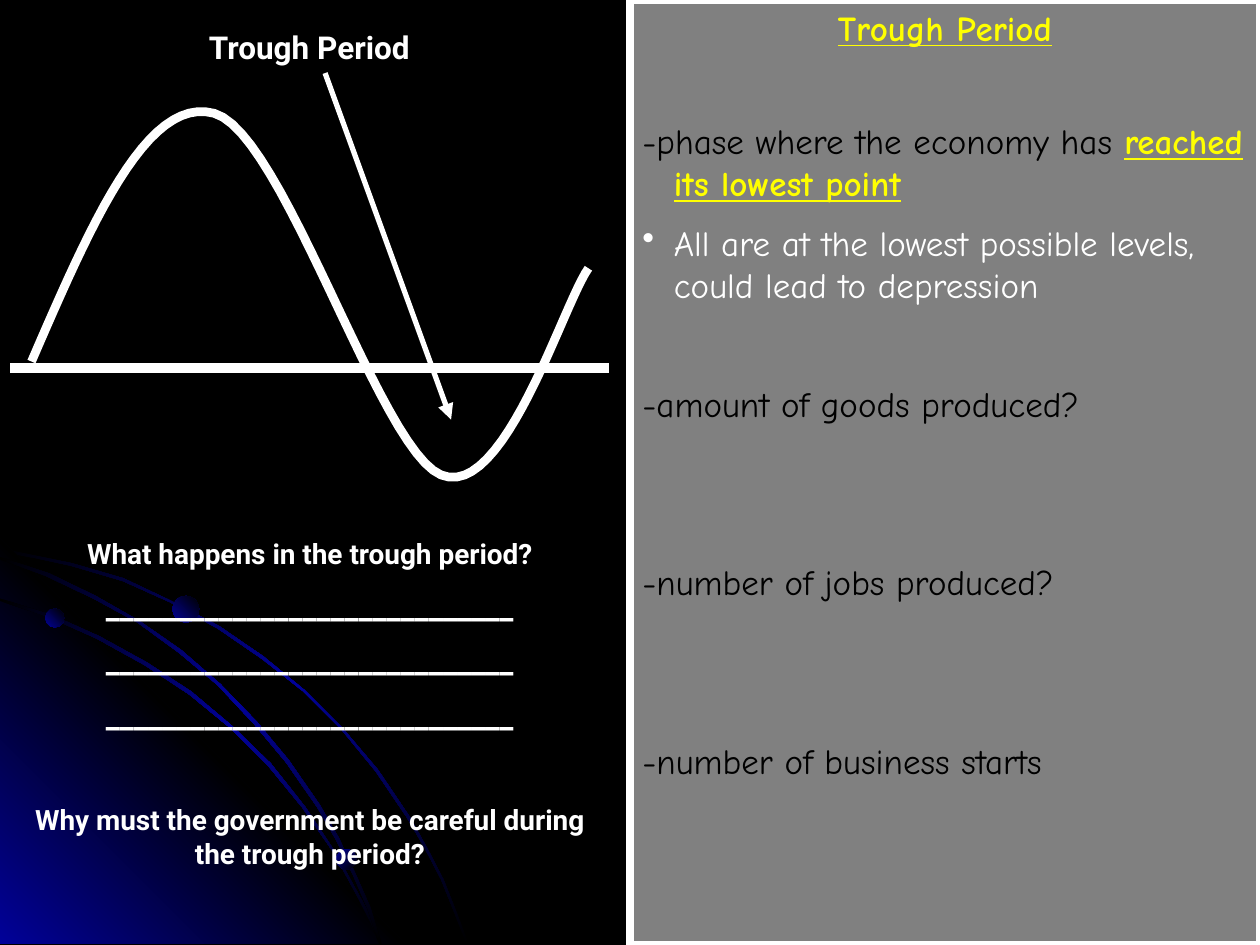
from dataclasses import dataclass
from typing import NamedTuple

from lxml.etree import SubElement
from pptx import Presentation
from pptx.dml.color import RGBColor
from pptx.enum.shapes import MSO_CONNECTOR, MSO_SHAPE
from pptx.enum.text import MSO_AUTO_SIZE, PP_ALIGN
from pptx.oxml.ns import qn
from pptx.util import Inches, Pt


@dataclass(frozen=True)
class Theme:
    black: str = "000000"
    white: str = "FFFFFF"
    yellow: str = "FFFF00"
    gray: str = "808080"
    blue: str = "010199"
    panel_font: str = "Comic Neue"
    diagram_font: str = "Roboto"
    panel_size: int = 20
    label_size: int = 18
    question_size: int = 16


THEME = Theme()
GLOW = (THEME.black, THEME.blue, THEME.black)
CORNER = (THEME.blue, THEME.black, THEME.blue)
ORB = (THEME.blue, THEME.black)


class Swoosh(NamedTuple):
    outline: list
    colors: tuple
    angle: int


class Planet(NamedTuple):
    left: float
    top: float
    size: float
    angle: int


class Run(NamedTuple):
    text: str
    color: str
    size: int
    strong: bool = False
    underline: bool = False


class Paragraph(NamedTuple):
    runs: list
    gap: float = 0
    bullet: bool = False


def paint_gradient(shape, colors: tuple, angle: int) -> None:
    """Spread the colors evenly; the angle runs clockwise."""
    shape.fill.gradient()
    shape.fill.gradient_angle = 360 - angle
    stops = shape.element.spPr.find(".//" + qn("a:gsLst"))
    for stop in list(stops):
        stops.remove(stop)
    for index, color in enumerate(colors):
        position = round(100000 * index / (len(colors) - 1))
        stop = SubElement(stops, qn("a:gs"), pos=str(position))
        SubElement(stop, qn("a:srgbClr"), val=color)
    shape.line.fill.background()
    shape.shadow.inherit = False


def add_outline(slide, points: list, close: bool):
    corners = [(Inches(x), Inches(y)) for x, y in points]
    builder = slide.shapes.build_freeform(*corners[0], scale=1.0)
    builder.add_line_segments(corners[1:], close=close)
    return builder.convert_to_shape()


def style_line(line, width: float) -> None:
    line.color.rgb = RGBColor.from_string(THEME.white)
    line.width = Pt(width)


def add_line(slide, start: tuple, end: tuple, width: float, arrow: bool = False) -> None:
    connector = slide.shapes.add_connector(
        MSO_CONNECTOR.STRAIGHT, *(Inches(v) for v in start + end))
    style_line(connector.line, width)
    properties = connector.element.spPr
    if arrow:
        SubElement(properties.find(qn("a:ln")), qn("a:tailEnd"), type="triangle")
    SubElement(properties, qn("a:effectLst"))


def add_text(slide, paragraphs: list, *, box: tuple, font: str,
             align=PP_ALIGN.CENTER, hanging: float = 0) -> None:
    frame = slide.shapes.add_textbox(*(Inches(v) for v in box)).text_frame
    frame.word_wrap = True
    frame.auto_size = MSO_AUTO_SIZE.SHAPE_TO_FIT_TEXT
    for index, content in enumerate(paragraphs):
        paragraph = frame.add_paragraph() if index else frame.paragraphs[0]
        paragraph.alignment = align
        paragraph.space_before = Pt(content.gap)
        properties = paragraph._p.get_or_add_pPr()
        if hanging:
            properties.set("marL", str(Inches(hanging)))
            properties.set("indent", str(-Inches(hanging)))
        if content.bullet:
            SubElement(properties, qn("a:buChar"), char="•")
        for piece in content.runs:
            run = paragraph.add_run()
            run.text = piece.text
            run.font.name = font
            run.font.size = Pt(piece.size)
            run.font.bold = piece.strong
            run.font.underline = piece.underline
            run.font.color.rgb = RGBColor.from_string(piece.color)


def curve_points(start: tuple, segments: list, steps: int = 24) -> list:
    """Sample a chain of cubic Bezier segments."""
    points = [start]
    for first, second, end in segments:
        origin = points[-1]
        for step in range(1, steps + 1):
            t = step / steps
            u = 1 - t
            points.append(tuple(
                u**3 * a + 3 * u * u * t * b + 3 * u * t * t * c + t**3 * d
                for a, b, c, d in zip(origin, first, second, end)))
    return points


SWOOSHES = [
    Swoosh([(0.57, 4.47), (0.28, 4.41), (0, 4.35), (0, 4.38), (0.28, 4.43), (0.56, 4.49),
            (0.97, 4.61), (1.35, 4.78), (1.73, 4.99), (2.08, 5.23), (2.41, 5.49),
            (2.71, 5.79), (2.98, 6.12), (3.23, 6.49), (3.37, 6.73), (3.5, 6.98),
            (3.6, 7.23), (3.7, 7.49), (3.72, 7.49), (3.62, 7.23), (3.52, 6.98),
            (3.39, 6.73), (3.25, 6.48), (3, 6.11), (2.72, 5.78), (2.42, 5.48),
            (2.09, 5.21), (1.74, 4.97), (1.36, 4.77), (0.98, 4.59)], GLOW, 45),
    Swoosh([(3.22, 7.49), (0, 7.49), (0, 4.27)], CORNER, 315),
    Swoosh([(2.85, 7.14), (2.94, 7.32), (3.01, 7.49), (3.03, 7.49), (2.96, 7.3),
            (2.86, 7.12), (2.66, 6.76), (2.42, 6.4), (2.15, 6.06), (1.84, 5.76),
            (1.52, 5.49), (1.17, 5.26), (0.79, 5.05), (0.41, 4.88), (0, 4.75), (0, 4.77),
            (0.39, 4.9), (0.77, 5.07), (1.15, 5.28), (1.5, 5.51), (1.83, 5.78),
            (2.13, 6.08), (2.4, 6.41), (2.65, 6.77)], GLOW, 45),
    Swoosh([(0, 4.42), (0, 4.44), (0.36, 4.57), (0.74, 4.75), (1.09, 4.94), (1.42, 5.18),
            (1.73, 5.44), (2.02, 5.75), (2.27, 6.05), (2.52, 6.41), (2.67, 6.67),
            (2.8, 6.94), (2.92, 7.22), (3.01, 7.49), (3.03, 7.49), (2.94, 7.2),
            (2.82, 6.93), (2.69, 6.65), (2.54, 6.39), (2.29, 6.03), (2.04, 5.73),
            (1.75, 5.43), (1.44, 5.16), (1.11, 4.93), (0.76, 4.73), (0.39, 4.55)], GLOW, 45),
]
PLANETS = [Planet(0.36, 4.83, 0.15, 315), Planet(2.67, 6.74, 0.16, 45),
           Planet(1.37, 4.73, 0.21, 315)]
CYCLE = curve_points((0.25, 2.87), [
    ((0.71, 1.81), (1.16, 0.75), (1.7, 0.9)),
    ((2.25, 1.05), (3.01, 3.57), (3.5, 3.77)),
    ((4, 3.98), (4.47, 2.41), (4.67, 2.13)),
])


def point(text: str, color: str = THEME.black, strong: bool = False) -> Run:
    return Run(text, color, THEME.panel_size, strong, strong)


def label(text: str, size: int = THEME.label_size) -> Run:
    return Run(text, THEME.white, size, True)


def main() -> None:
    deck = Presentation()
    deck.slide_width, deck.slide_height = Inches(10), Inches(7.5)
    slide = deck.slides.add_slide(deck.slide_layouts[6])
    slide.background.fill.solid()
    slide.background.fill.fore_color.rgb = RGBColor.from_string(THEME.black)

    # Orbit decoration in the corner
    for swoosh in SWOOSHES:
        paint_gradient(add_outline(slide, swoosh.outline, True), swoosh.colors, swoosh.angle)
    for left, top, size, angle in PLANETS:
        planet = slide.shapes.add_shape(
            MSO_SHAPE.OVAL, *(Inches(v) for v in (left, top, size, size)))
        paint_gradient(planet, ORB, angle)

    # Definition panel
    panel = slide.shapes.add_shape(
        MSO_SHAPE.RECTANGLE, Inches(5), Inches(0), Inches(5), Inches(7.5))
    panel.fill.solid()
    panel.fill.fore_color.rgb = RGBColor.from_string(THEME.gray)
    style_line(panel.line, 4.5)
    panel.shadow.inherit = False
    add_text(slide, [Paragraph([point("Trough Period", THEME.yellow, True)])],
             box=(5, 0, 5, 0.43), font=THEME.panel_font)
    add_text(slide, [
        Paragraph([point("-phase where the economy has "),
                   point("reached its lowest point", THEME.yellow, True)]),
        Paragraph([point("All are at the lowest possible levels, could lead to depression",
                         THEME.white)], gap=10, bullet=True),
        Paragraph([point("-amount of goods produced?")], gap=44),
        Paragraph([point("-number of jobs produced?")], gap=78),
        Paragraph([point("-number of business starts")], gap=78),
    ], box=(5, 0.9, 5, 5.6), font=THEME.panel_font, align=PP_ALIGN.LEFT, hanging=0.25)

    # Business cycle diagram
    add_text(slide, [Paragraph([label("Trough Period")])],
             box=(0.33, 0.17, 4.25, 0.4), font=THEME.diagram_font)
    cycle = add_outline(slide, CYCLE, False)
    cycle.fill.background()
    style_line(cycle.line, 5)
    cycle.shadow.inherit = False
    add_line(slide, (0.08, 2.92), (4.83, 2.92), 6)
    add_line(slide, (2.58, 0.58), (3.58, 3.33), 3, arrow=True)

    # Questions with answer lines
    answer_line = Paragraph([label("_" * 29)], gap=9.5)
    add_text(slide, [
        Paragraph([label("What happens in the trough period?", THEME.question_size)]),
        *[answer_line] * 3,
        Paragraph([label("Why must the government be careful during the trough period?",
                         THEME.question_size)], gap=39.5),
    ], box=(0, 4.21, 4.92, 2.84), font=THEME.diagram_font)

    deck.save("out.pptx")


if __name__ == "__main__":
    main()
